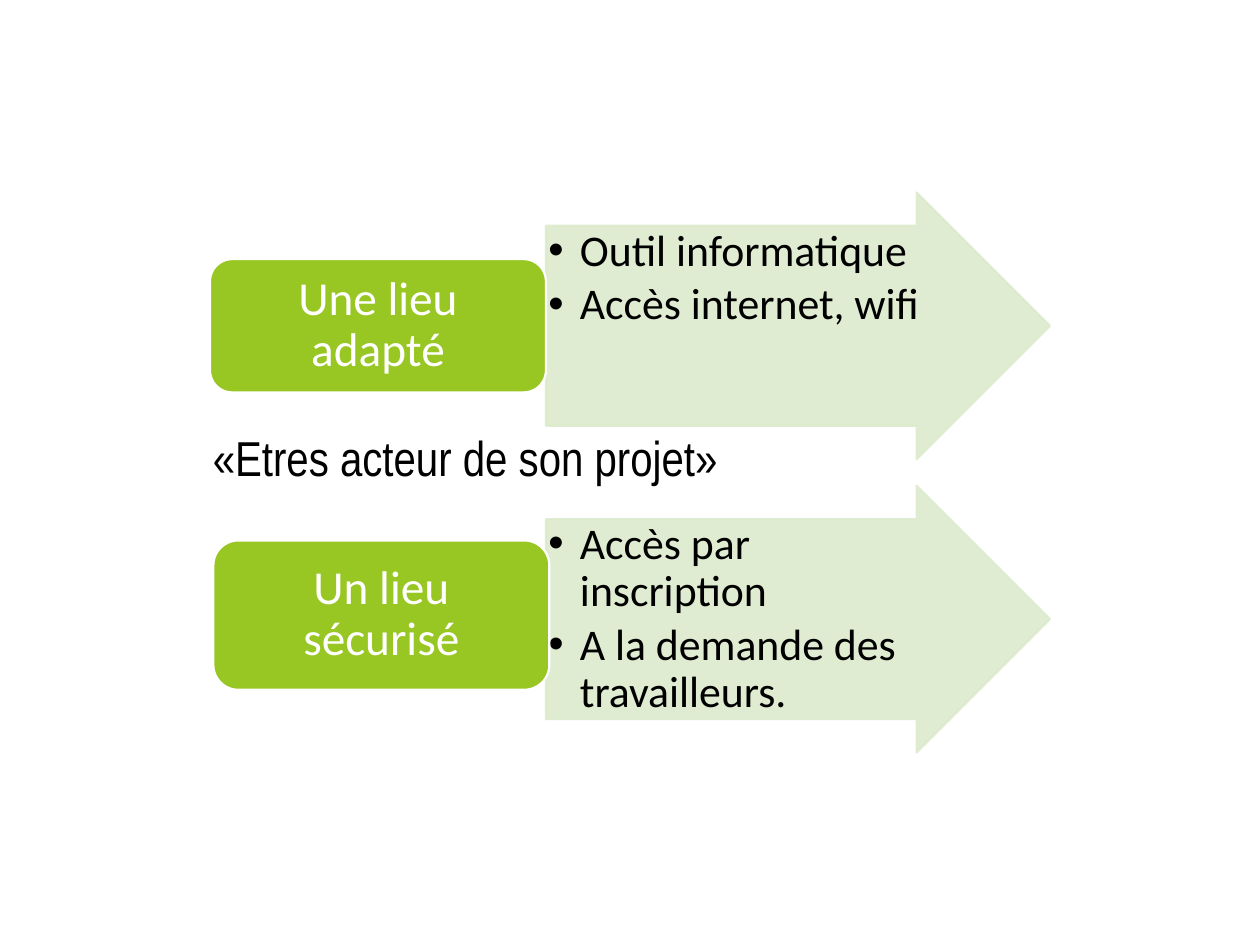
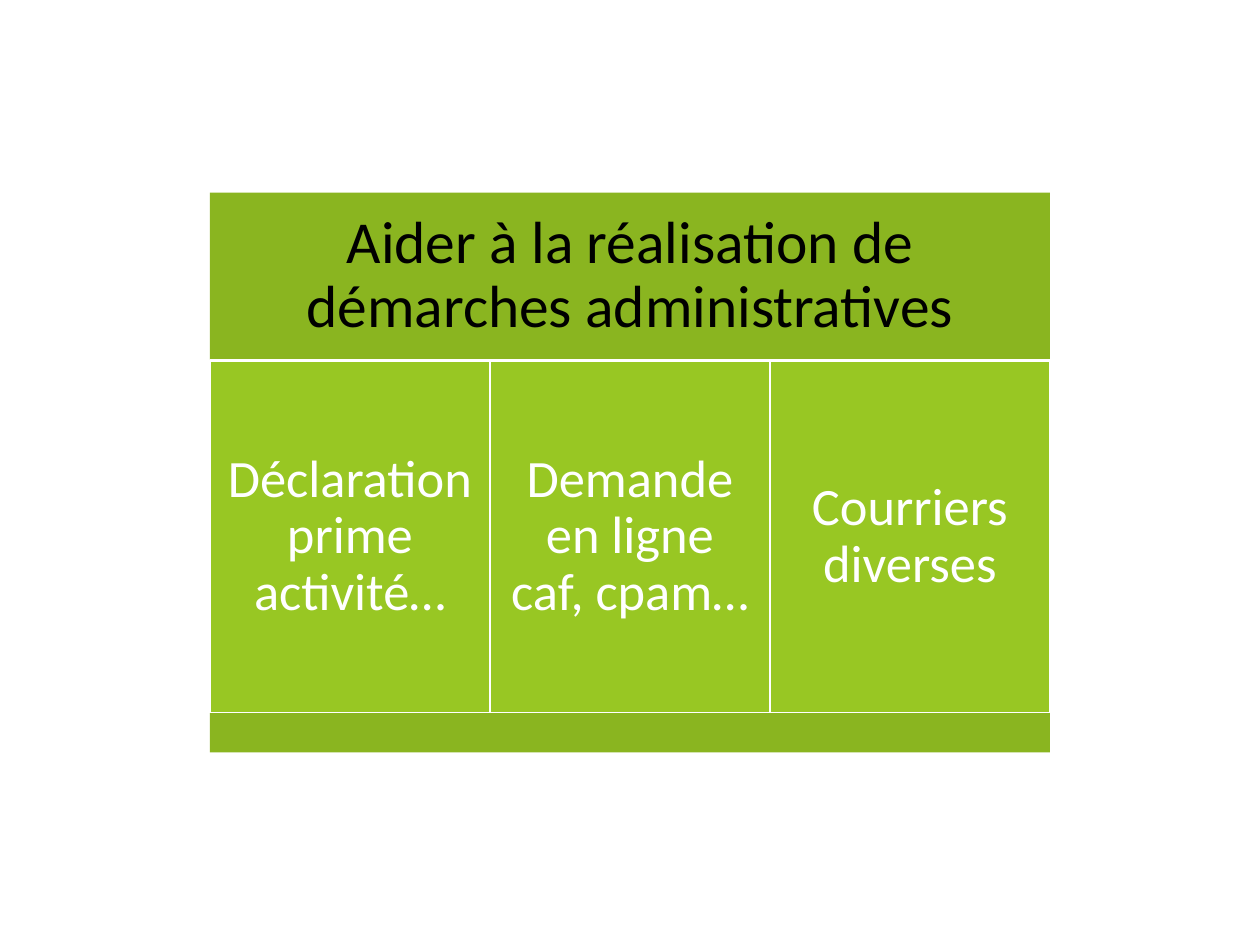
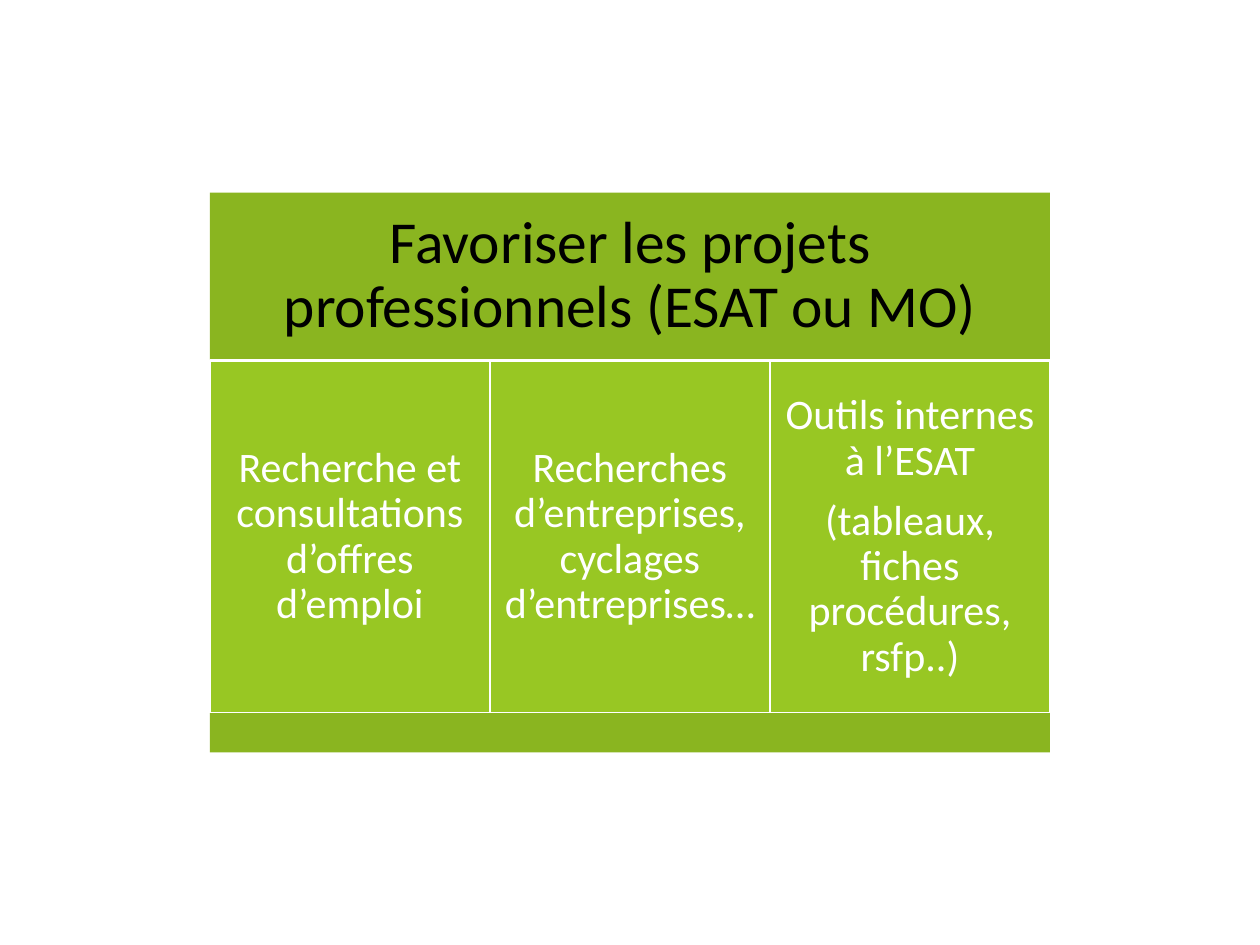
from collections import namedtuple

from lxml import etree
from pptx import Presentation
from pptx.dml.color import RGBColor
from pptx.enum.shapes import MSO_SHAPE
from pptx.enum.text import MSO_ANCHOR, PP_ALIGN
from pptx.oxml.ns import qn
from pptx.util import Inches, Pt

RECTANGLE = MSO_SHAPE.RECTANGLE
ROUNDED = MSO_SHAPE.ROUNDED_RECTANGLE
ARROW = MSO_SHAPE.RIGHT_ARROW
TOP, MIDDLE = MSO_ANCHOR.TOP, MSO_ANCHOR.MIDDLE
LEFT, CENTER = PP_ALIGN.LEFT, PP_ALIGN.CENTER

COLORS = {"band": "8AB520", "block": "98C723", "arrow": "DDEBCD",
          "dark": "000000", "light": "FFFFFF"}
BODY_FONT, TITLE_FONT, BULLET_FONT = "Calibri", "Arial Narrow", "Arial"
LINE_WIDTH = Pt(1.25)

Box = namedtuple("Box", "left top width height")


def part(box, left, top, width, height):
    """Return the part of a box given by shares of its size."""
    return Box(int(box.left + left * box.width), int(box.top + top * box.height),
               int(width * box.width), int(height * box.height))


def color(name):
    """Return a palette colour."""
    return RGBColor.from_string(COLORS[name])


def add_block(slide, kind, box, fill, line=None):
    """Add a flat filled shape, outlined if a line colour is named."""
    block = slide.shapes.add_shape(kind, *box)
    block.shadow.inherit = False
    block.fill.solid()
    block.fill.fore_color.rgb = color(fill)
    if line:
        block.line.color.rgb = color(line)
        block.line.width = LINE_WIDTH
    else:
        block.line.fill.background()
    return block


def set_opacity(block, percent):
    """Make the fill and the line of a block partly transparent."""
    for rgb in block._element.spPr.iter(qn("a:srgbClr")):
        etree.SubElement(rgb, qn("a:alpha"), val=str(percent * 1000))


def add_bullet(paragraph):
    """Give a paragraph a bullet with a hanging indent."""
    paragraph.level = 1
    properties = paragraph._p.get_or_add_pPr()
    properties.set("marL", str(Inches(0.25)))
    properties.set("indent", str(-Inches(0.25)))
    etree.SubElement(properties, qn("a:buFont"), typeface=BULLET_FONT)
    etree.SubElement(properties, qn("a:buChar"), char="•")


def write(block, lines, size, ink, insets, anchor=MIDDLE, align=CENTER,
          font=BODY_FONT, spacing=0.9, after=0.35, bullets=False):
    """Write paragraphs in a block, with insets in inches."""
    frame = block.text_frame
    frame.word_wrap = True
    frame.vertical_anchor = anchor
    (frame.margin_left, frame.margin_top,
     frame.margin_right, frame.margin_bottom) = map(Inches, insets)
    for index, line in enumerate(lines):
        paragraph = frame.add_paragraph() if index else frame.paragraphs[0]
        paragraph.text = line
        if bullets:
            add_bullet(paragraph)
        paragraph.alignment = align
        paragraph.line_spacing = spacing
        paragraph.space_after = Pt(after * size)
        paragraph.font.size = Pt(size)
        paragraph.font.name = font
        paragraph.font.color.rgb = color(ink)


def add_title(slide, box, title):
    """Add the slide title in the middle of the box."""
    write(slide.shapes.add_textbox(*box), [title], 28, "dark",
          (1.1, 0.05, 0.1, 0.05), align=LEFT, font=TITLE_FONT, spacing=1, after=0)


def add_arrow_row(slide, box, label, label_place, details):
    """Add an arrow with bulleted details and the label at its tail."""
    arrow_box = part(box, 0.4, 0, 0.6, 1)
    arrow = add_block(slide, ARROW, arrow_box, "arrow", "arrow")
    arrow.adjustments[0], arrow.adjustments[1] = 0.75, 0.5
    set_opacity(arrow, 90)
    detail_text = slide.shapes.add_textbox(*part(arrow_box, 0, 0.125, 0.8, 0.75))
    write(detail_text, details, 25, "dark", [0.02] * 4, anchor=TOP,
          align=LEFT, after=0.15, bullets=True)
    shift, top, height = label_place
    tag = add_block(slide, ROUNDED, part(box, shift, top, 0.4, height),
                    "block", "light")
    write(tag, [label], 27, "light", (0.11, 0.06, 0.11, 0.06))


def add_arrow_list(slide, box, rows):
    """Stack arrow rows with a gap of a tenth of a row."""
    height = 1 / (1.1 * len(rows) - 0.1)
    for index, row in enumerate(rows):
        add_arrow_row(slide, part(box, 0, 1.1 * index * height, 1, height), *row)


def add_banded_columns(slide, box, heading, columns, size, inset):
    """Add a heading band, equal columns and a closing band."""
    header = add_block(slide, RECTANGLE, part(box, 0, 0, 1, 0.3), "band")
    write(header, [heading], 34, "dark", [0.14] * 4)
    width = 1 / len(columns)
    for index, lines in enumerate(columns):
        column = add_block(slide, RECTANGLE,
                           part(box, index * width, 0.3, width, 0.63),
                           "block", "light")
        write(column, lines, size, "light", [inset] * 4)
    add_block(slide, RECTANGLE, part(box, 0, 0.93, 1, 0.07), "band")


def main():
    """Build and save the three slides."""
    deck = Presentation()
    deck.slide_width, deck.slide_height = Inches(10), Inches(7.5)
    page = Box(0, 0, deck.slide_width, deck.slide_height)
    content = part(page, 1 / 6, 11 / 54, 2 / 3, 16 / 27)
    place, needs, projects = [deck.slides.add_slide(deck.slide_layouts[6])
                              for _ in range(3)]

    add_title(place, part(page, 0.059, 0.067, 0.783, 0.833),
              "«Etres acteur de son projet»")
    add_arrow_list(place, content, [
        ("Une lieu adapté", (0, 0.25, 0.5),
         ["Outil informatique", "Accès internet, wifi"]),
        ("Un lieu sécurisé", (0.004, 0.205, 0.56),
         ["Accès par inscription", "A la demande des travailleurs."]),
    ])
    add_banded_columns(
        needs, content, "Aider à la réalisation de démarches administratives",
        [["Déclaration prime activité…"], ["Demande en ligne caf, cpam…"],
         ["Courriers diverses"]], 30, 0.12)
    add_banded_columns(
        projects, content, "Favoriser les projets professionnels (ESAT ou MO)",
        [["Recherche et consultations d’offres d’emploi"],
         ["Recherches d’entreprises, cyclages d’entreprises…"],
         ["Outils internes à l’ESAT", "(tableaux, fiches procédures, rsfp..)"]],
        24, 0.1)
    deck.save("out.pptx")


if __name__ == "__main__":
    main()
